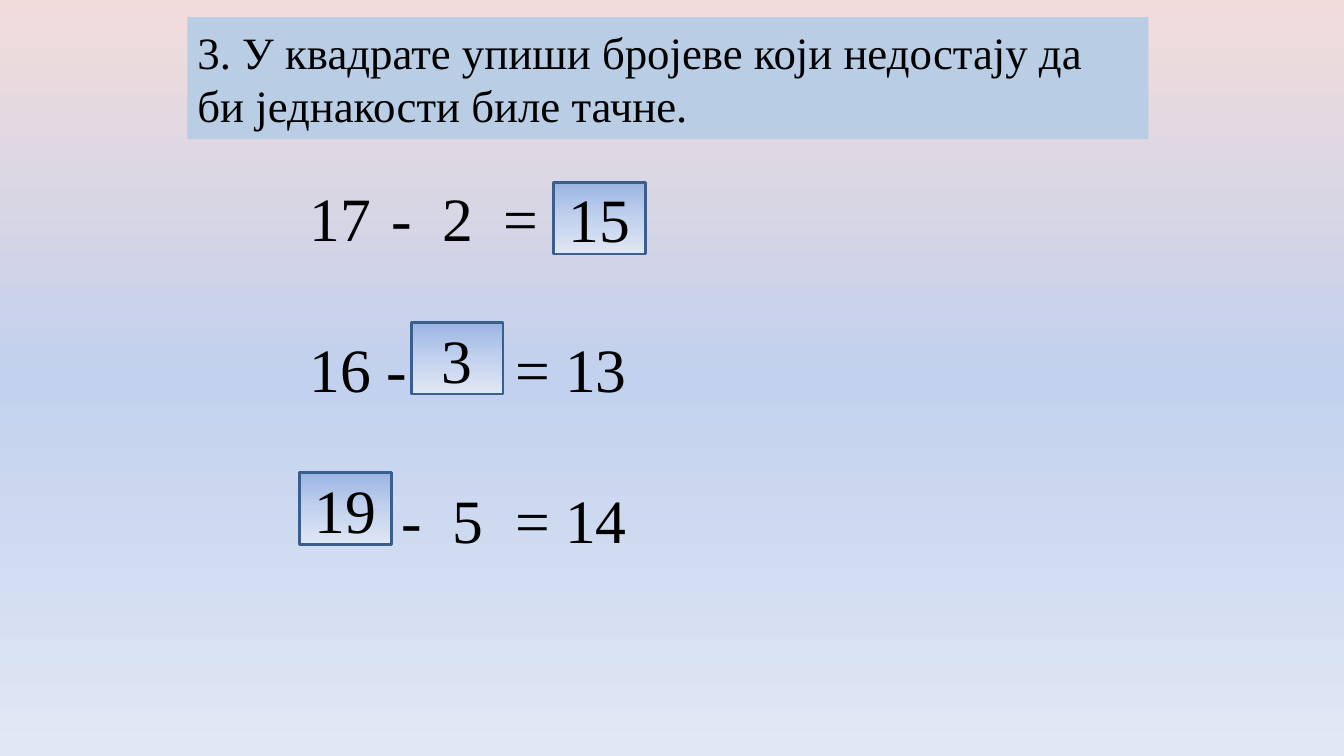
from pptx import Presentation
from pptx.dml.color import RGBColor
from pptx.enum.shapes import MSO_SHAPE
from pptx.enum.text import MSO_ANCHOR, PP_ALIGN
from pptx.oxml.ns import qn
from pptx.util import Inches, Pt
from lxml.etree import SubElement

FONT = "Times New Roman"
HEX = {
    "text": "000000",
    "title": "B9CDE5",
    "line": "3A5F8C",
    "rose": "F2DCDB",
    "blue": "9AB5E4",
    "mid": "C2D1ED",
    "pale": "E1E8F5",
}
TITLE = "3. У квадрате упиши бројеве који недостају да би једнакости биле тачне."
SUMS = [
    ("17\t-\t2\t=", (0.81, 1.32, 1.93)),
    ("16 -\t= 13", (2.04,)),
    ("\t-\t5\t= 14", (0.91, 1.42, 2.04)),
]
CELLS = [("15", 2.52, 0.07), ("3", 1.11, 1.46), ("19", 0, 2.95)]


def color(name):
    return RGBColor.from_string(HEX[name])


def shade(fill, root, names):
    fill.gradient()
    fill.gradient_angle = 270
    stops = next(root.iter(qn("a:gsLst")))
    for old in list(stops):
        stops.remove(old)
    for i, name in enumerate(names):
        stop = SubElement(stops, qn("a:gs"), pos=str(i * 50000))
        SubElement(stop, qn("a:srgbClr"), val=HEX[name])


def write(para, text, size):
    run = para.add_run()
    run.text = text
    run.font.size = Pt(size)
    run.font.name = FONT
    run.font.color.rgb = color("text")


def panel(slide, box, text, size, align):
    shape = slide.shapes.add_shape(MSO_SHAPE.RECTANGLE, *map(Inches, box))
    shape.shadow.inherit = False
    frame = shape.text_frame
    frame.word_wrap = True
    frame.vertical_anchor = MSO_ANCHOR.MIDDLE
    para = frame.paragraphs[0]
    para.alignment = align
    write(para, text, size)
    return shape


def head(slide, box):
    shape = panel(slide, box, TITLE, 32, PP_ALIGN.LEFT)
    shape.fill.solid()
    shape.fill.fore_color.rgb = color("title")
    shape.line.fill.background()


def cell(slide, box, text):
    shape = panel(slide, box, text, 44, PP_ALIGN.CENTER)
    shade(shape.fill, shape._element, ("blue", "mid", "pale"))
    shape.line.color.rgb = color("line")
    shape.line.width = Pt(2)


def sums(slide, box):
    left, top = box[:2]
    frame = slide.shapes.add_textbox(*map(Inches, box)).text_frame
    frame.word_wrap = True
    for i, (text, tabs) in enumerate(SUMS):
        para = frame.add_paragraph() if i else frame.paragraphs[0]
        para.space_before = Pt(55 if i else 0)
        stops = SubElement(para._p.get_or_add_pPr(), qn("a:tabLst"))
        for x in tabs:
            SubElement(stops, qn("a:tab"), pos=str(Inches(x)), algn="l")
        write(para, text, 44)
    for text, x, y in CELLS:
        cell(slide, (left + x, top + y, 0.91, 0.71), text)


def main():
    deck = Presentation()
    deck.slide_width = Inches(13.33)
    deck.slide_height = Inches(7.5)
    slide = deck.slides.add_slide(deck.slide_layouts[6])
    shade(slide.background.fill, slide._element, ("rose", "mid", "pale"))
    head(slide, (1.86, 0.17, 9.53, 1.21))
    sums(slide, (2.97, 1.74, 4.41, 3.75))
    deck.save("out.pptx")


if __name__ == "__main__":
    main()
